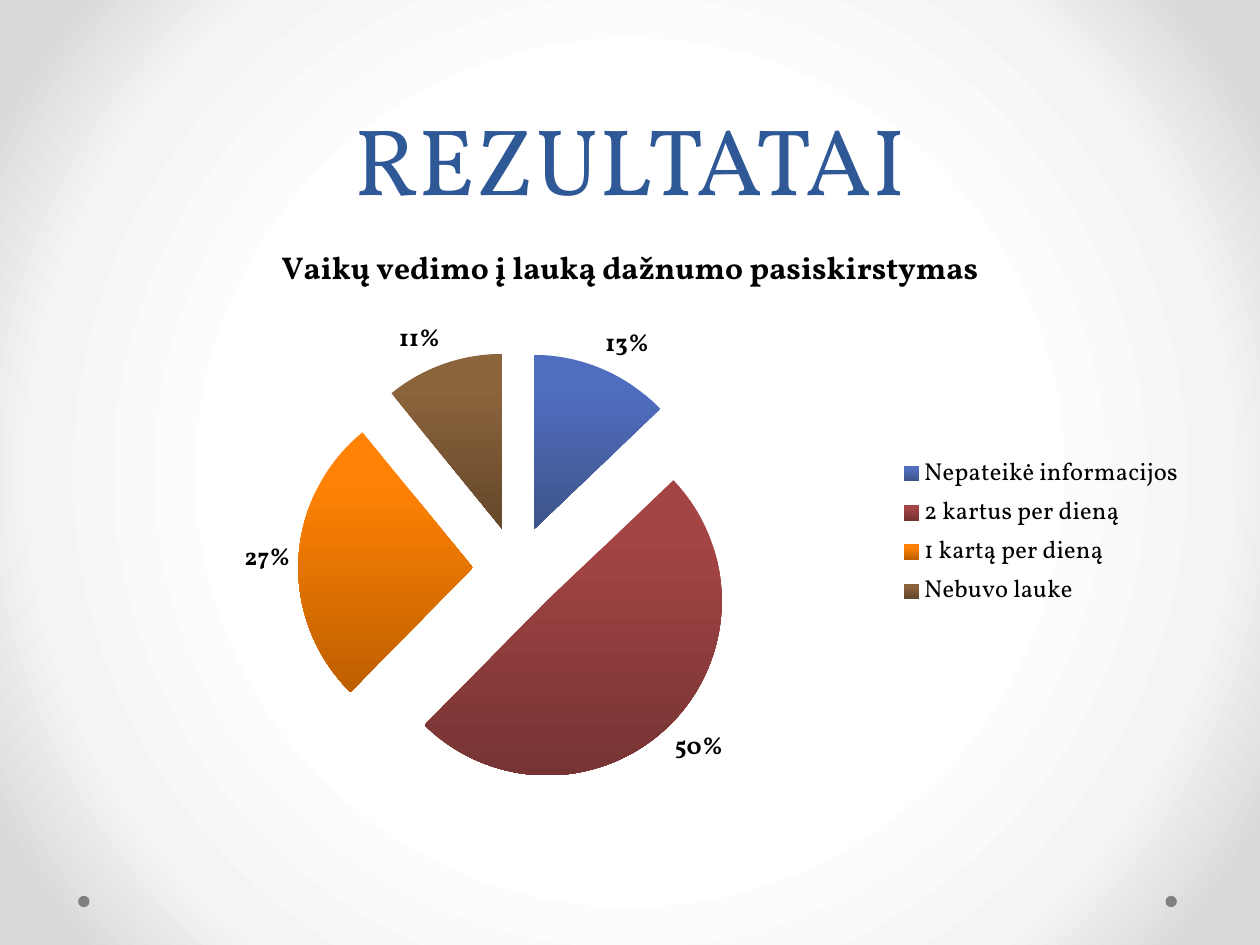
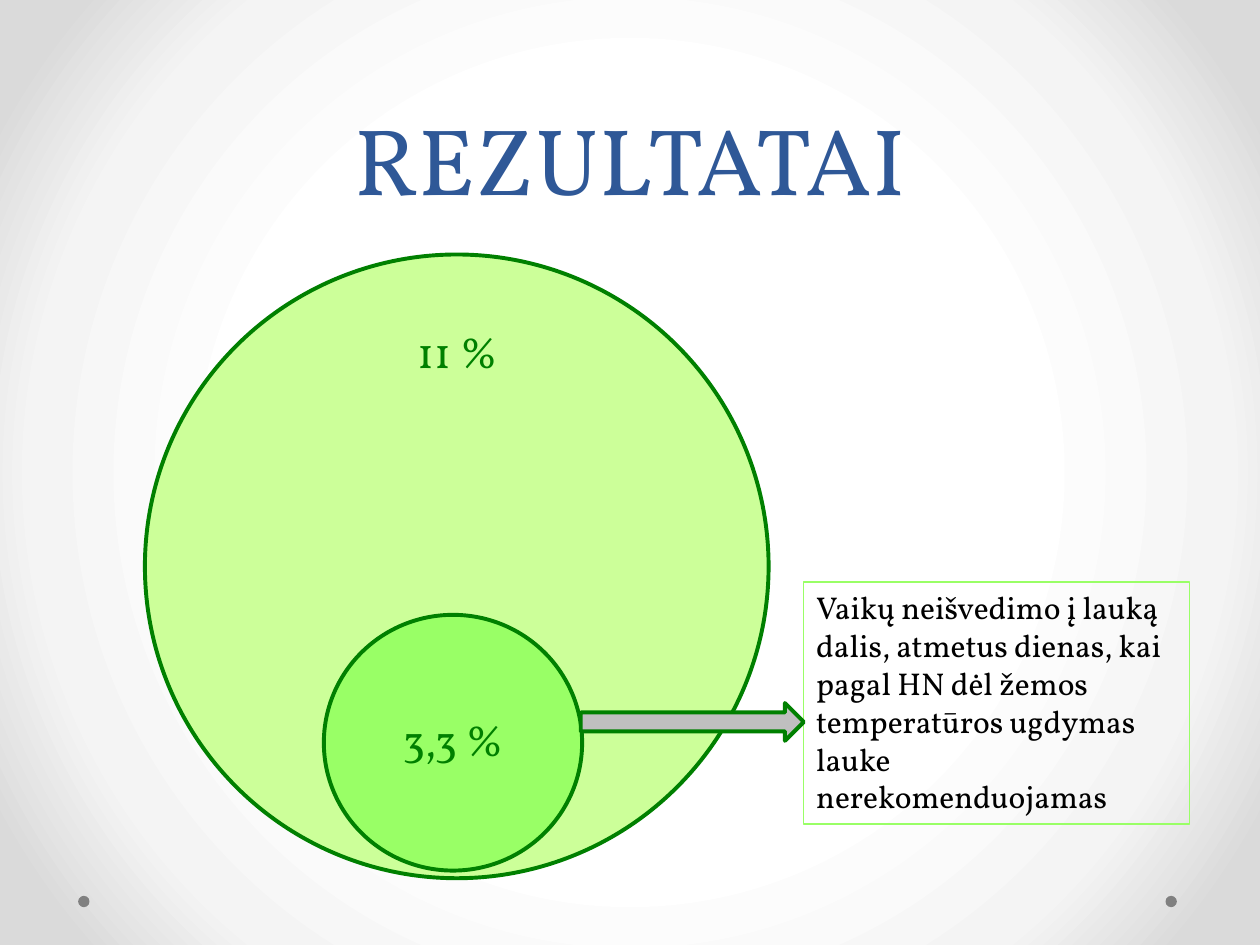
import pptx
import pptx.chart.data
import pptx.dml.color
import pptx.enum.chart
import pptx.enum.shapes
import pptx.enum.text
import pptx.oxml
import pptx.oxml.ns
import pptx.util

Inches, Pt = pptx.util.Inches, pptx.util.Pt
SHAPE = pptx.enum.shapes.MSO_SHAPE
ALIGN = pptx.enum.text.PP_ALIGN
ANCHOR = pptx.enum.text.MSO_ANCHOR

FONT = "Vollkorn"
COLOURS = {
    "title": "2F5897", "text": "000000", "dot": "808080",
    "green": "008000", "outer": "CCFF99", "inner": "99FF66", "arrow": "BFBFBF",
}
BACKDROP = [(50, "FFFFFF"), (76, "F4F4F4"), (92, "DADADA")]
# category, share, top and bottom colour of the slice
FREQUENCIES = [
    ("Nepateikė informacijos", 13, "506EC0", "3E5488"),
    ("2 kartus per dieną", 50, "A44444", "763434"),
    ("1 kartą per dieną", 27, "FF8205", "BE5F00"),
    ("Nebuvo lauke", 11, "8B643C", "65472A"),
]


def rgb(value):
    return pptx.dml.color.RGBColor.from_string(value)


def style_font(font, size, colour, bold=False):
    font.name, font.size, font.bold = FONT, Pt(size), bold
    font.color.rgb = rgb(COLOURS[colour])


def add_figure(slide, kind, box, fill=None, line=None, width=2.25):
    figure = slide.shapes.add_shape(kind, *map(Inches, box))
    figure.shadow.inherit = False
    if fill:
        figure.fill.solid()
        figure.fill.fore_color.rgb = rgb(COLOURS[fill])
    else:
        figure.fill.background()
    if line:
        figure.line.color.rgb = rgb(COLOURS[line])
        figure.line.width = Pt(width)
    else:
        figure.line.fill.background()
    return figure


def write(shape, text, size, colour, align, anchor, spacing=None):
    frame = shape.text_frame
    frame.word_wrap = True
    frame.vertical_anchor = anchor
    paragraph = frame.paragraphs[0]
    paragraph.text = text
    paragraph.alignment = align
    paragraph.line_spacing = spacing
    style_font(paragraph.font, size, colour)


def add_label(slide, box, text, size, colour, anchor, spacing):
    label = slide.shapes.add_textbox(*map(Inches, box))
    write(label, text, size, colour, ALIGN.CENTER, anchor, spacing)


def paint_background(slide):
    stops = "".join(
        f'<a:gs pos="{position * 1000}"><a:srgbClr val="{colour}"/></a:gs>'
        for position, colour in BACKDROP)
    gradient = pptx.oxml.parse_xml(
        f'<a:gradFill {pptx.oxml.ns.nsdecls("a")} rotWithShape="1"><a:gsLst>{stops}</a:gsLst>'
        '<a:path path="circle"><a:fillToRect l="50000" t="50000" r="50000" b="50000"/></a:path>'
        '</a:gradFill>')
    fill = slide.background.fill
    fill.solid()
    solid = slide.background._cSld.bg.bgPr.find(pptx.oxml.ns.qn("a:solidFill"))
    solid.getparent().replace(solid, gradient)


def add_base_slide(deck, title):
    slide = deck.slides.add_slide(deck.slide_layouts[6])
    paint_background(slide)
    for left in (9.25, 0.62):
        add_figure(slide, SHAPE.OVAL, (left, 7.11, 0.09, 0.09), "dot")
    add_label(slide, (0.5, 0, 9, 1.75), title, 54, "title", ANCHOR.BOTTOM, Pt(58))
    return slide


def set_plot_layout(chart, x, y, w, h):
    plot_area = chart._chartSpace.chart.plotArea
    for layout in plot_area.findall(pptx.oxml.ns.qn("c:layout")):
        plot_area.remove(layout)
    sizes = "".join(f'<c:{tag} val="{value}"/>' for tag, value in zip("xywh", (x, y, w, h)))
    plot_area.insert(0, pptx.oxml.parse_xml(
        f'<c:layout {pptx.oxml.ns.nsdecls("c")}><c:manualLayout><c:layoutTarget val="inner"/>'
        f'<c:xMode val="edge"/><c:yMode val="edge"/>{sizes}</c:manualLayout></c:layout>'))


def add_frequency_pie(slide, box):
    data = pptx.chart.data.CategoryChartData()
    data.categories = [row[0] for row in FREQUENCIES]
    data.add_series("Series 1", [row[1] for row in FREQUENCIES])
    chart = slide.shapes.add_chart(
        pptx.enum.chart.XL_CHART_TYPE.PIE, *map(Inches, box), data).chart
    style_font(chart.font, 10, "text")

    # Heading and legend
    chart.has_title = True
    heading = chart.chart_title.text_frame.paragraphs[0]
    heading.text = "Vaikų vedimo į lauką dažnumo pasiskirstymas"
    style_font(heading.font, 18, "text", True)
    chart.has_legend = True
    chart.legend.position = pptx.enum.chart.XL_LEGEND_POSITION.RIGHT
    chart.legend.include_in_layout = False
    style_font(chart.legend.font, 14, "text")
    set_plot_layout(chart, 0.09, 0.21, 0.62, 0.7)

    # Pulled-out slices
    plot = chart.plots[0]
    plot.vary_by_categories = True
    slices = plot.series[0]
    for index, (_, _, top, bottom) in enumerate(FREQUENCIES):
        fill = slices.points[index].format.fill
        fill.gradient()
        fill.gradient_angle = 270
        for stop, colour, position in zip(fill.gradient_stops, (top, bottom), (0.2, 1)):
            stop.color.rgb = rgb(colour)
            stop.position = position
    first_point = slices._element.find(pptx.oxml.ns.qn("c:dPt"))
    first_point.addprevious(pptx.oxml.parse_xml(
        f'<c:explosion {pptx.oxml.ns.nsdecls("c")} val="25"/>'))

    # Percentages
    plot.has_data_labels = True
    labels = plot.data_labels
    labels.show_percentage, labels.show_value = True, False
    labels.number_format, labels.number_format_is_linked = "0%", False
    labels.position = pptx.enum.chart.XL_LABEL_POSITION.OUTSIDE_END
    style_font(labels.font, 14, "text", True)


def add_share_circles(slide, left, top):
    circles = [
        ((0, 0, 4.95, 4.95), "outer", (1.18, 0.37, 2.6, 0.84), "11 %"),
        ((1.42, 2.86, 2.05, 2.03), "inner", (1.72, 3.37, 1.45, 1.01), "3,3 %"),
    ]
    for circle, fill, label, share in circles:
        for box in (circle, label):
            placed = (left + box[0], top + box[1], *box[2:])
            if box is circle:
                add_figure(slide, SHAPE.OVAL, placed, fill, "green")
            else:
                add_label(slide, placed, share, 25, "green", ANCHOR.MIDDLE, 0.9)


def add_explanation(slide, left, top):
    note = add_figure(slide, SHAPE.RECTANGLE, (left, top, 3.06, 1.92), line="inner", width=0.75)
    write(note, "Vaikų neišvedimo į lauką dalis, atmetus dienas, kai pagal HN dėl žemos "
          "temperatūros ugdymas lauke nerekomenduojamas", 18, "text", ALIGN.LEFT, ANCHOR.TOP)
    add_figure(slide, SHAPE.RIGHT_ARROW, (left - 1.77, top + 0.96, 1.77, 0.3), "arrow", "green")


def main():
    deck = pptx.Presentation()
    deck.slide_width, deck.slide_height = Inches(10), Inches(7.5)

    frequency = add_base_slide(deck, "REZULTATAI")
    add_frequency_pie(frequency, (0.5, 1.75, 9, 4.95))

    share = add_base_slide(deck, "REZULTATAI")
    add_share_circles(share, 1.15, 2.02)
    add_explanation(share, 6.38, 4.62)

    deck.save("out.pptx")


if __name__ == "__main__":
    main()
